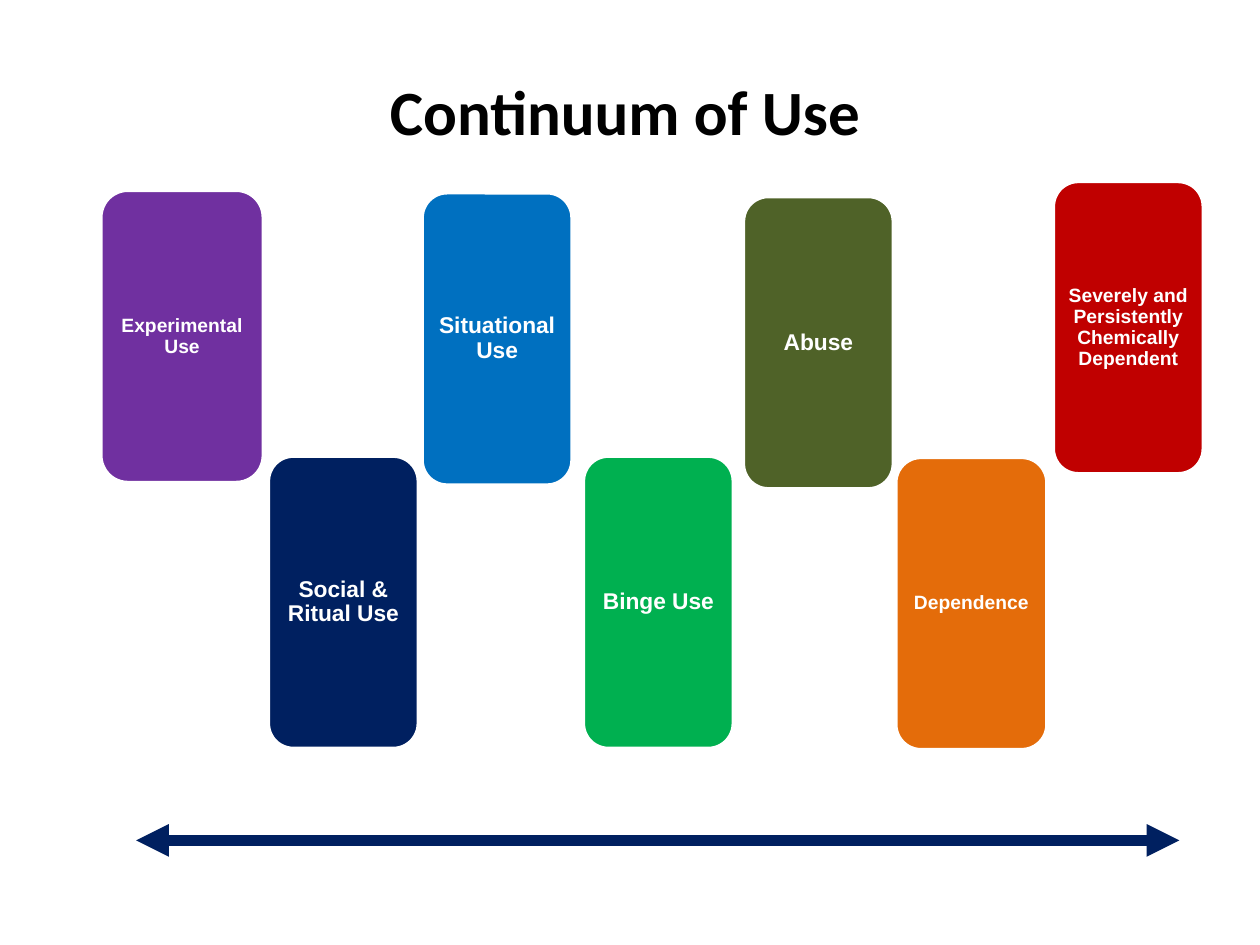
from lxml import etree
from pptx import Presentation
from pptx import util as u
from pptx.dml.color import RGBColor
from pptx.enum import shapes, text
from pptx.oxml.ns import qn

WHITE = RGBColor(0xFF, 0xFF, 0xFF)
BLACK = RGBColor(0x00, 0x00, 0x00)
PURPLE = RGBColor(0x70, 0x30, 0xA0)
NAVY = RGBColor(0x00, 0x20, 0x60)
BLUE = RGBColor(0x00, 0x70, 0xC0)
GREEN = RGBColor(0x00, 0xB0, 0x50)
OLIVE = RGBColor(0x4F, 0x62, 0x28)
ORANGE = RGBColor(0xE4, 0x6C, 0x0A)
RED = RGBColor(0xC0, 0x00, 0x00)

CARD_HEIGHT = 2.32
STAGES = [
    ("Experimental Use", 0.8, 1.51, 1.29, 11, PURPLE),
    ("Social & Ritual Use", 2.13, 3.62, 1.19, 13, NAVY),
    ("Situational Use", 3.35, 1.53, 1.19, 13, BLUE),
    ("Binge Use", 4.63, 3.62, 1.19, 13, GREEN),
    ("Abuse", 5.9, 1.56, 1.19, 13, OLIVE),
    ("Dependence", 7.11, 3.63, 1.2, 11, ORANGE),
    ("Severely and Persistently Chemically Dependent", 8.36, 1.44, 1.19, 11, RED),
]


def write(sp, label, inset, spacing, **font):
    """Put one centred paragraph in the middle of a shape."""
    tf = sp.text_frame
    frame = {"word_wrap": True, "vertical_anchor": text.MSO_ANCHOR.MIDDLE}
    for side in ("left", "top", "right", "bottom"):
        frame["margin_" + side] = u.Inches(inset)
    for name, value in frame.items():
        setattr(tf, name, value)
    p = tf.paragraphs[0]
    p.alignment = text.PP_ALIGN.CENTER
    p.line_spacing = spacing
    r = p.add_run()
    r.text = label
    r.font.color.rgb = font.pop("color")
    for name, value in font.items():
        setattr(r.font, name, value)


def add_title(s, label):
    """Add the slide heading."""
    sp = s.shapes.add_textbox(u.Inches(0.67), u.Inches(0.25), u.Inches(8.58), u.Inches(1.25))
    write(sp, label, 0.1, 1.0, name="Calibri", size=u.Pt(36), bold=True, color=BLACK)


def add_stage(s, label, left, top, width, size, color):
    """Add one rounded card for a stage of use."""
    sp = s.shapes.add_shape(
        shapes.MSO_SHAPE.ROUNDED_RECTANGLE,
        u.Inches(left), u.Inches(top), u.Inches(width), u.Inches(CARD_HEIGHT))
    sp.shadow.inherit = False
    sp.fill.solid()
    sp.fill.fore_color.rgb = color
    sp.line.color.rgb = WHITE
    sp.line.width = u.Pt(2)
    write(sp, label, 0.06, 0.9, name="Arial", size=u.Pt(size), bold=True, color=WHITE)


def add_double_arrow(s, left, right, y, color, width):
    """Add a horizontal line with an arrowhead at each end."""
    line = s.shapes.add_connector(
        shapes.MSO_CONNECTOR.STRAIGHT,
        u.Inches(left), u.Inches(y), u.Inches(right), u.Inches(y))
    line.line.color.rgb = color
    line.line.width = u.Pt(width)
    ln = line.line._get_or_add_ln()
    for end in ("a:headEnd", "a:tailEnd"):
        etree.SubElement(ln, qn(end), type="triangle")
    etree.SubElement(line._element.spPr, qn("a:effectLst"))


def main():
    """Build the slide and save it."""
    prs = Presentation()
    prs.slide_width, prs.slide_height = u.Inches(10), u.Inches(7.5)
    s = prs.slides.add_slide(prs.slide_layouts[6])
    for stage in STAGES:
        add_stage(s, *stage)
    add_title(s, "Continuum of Use")
    add_double_arrow(s, 1.08, 9.36, 6.67, NAVY, 6.25)
    prs.save("out.pptx")


if __name__ == "__main__":
    main()
